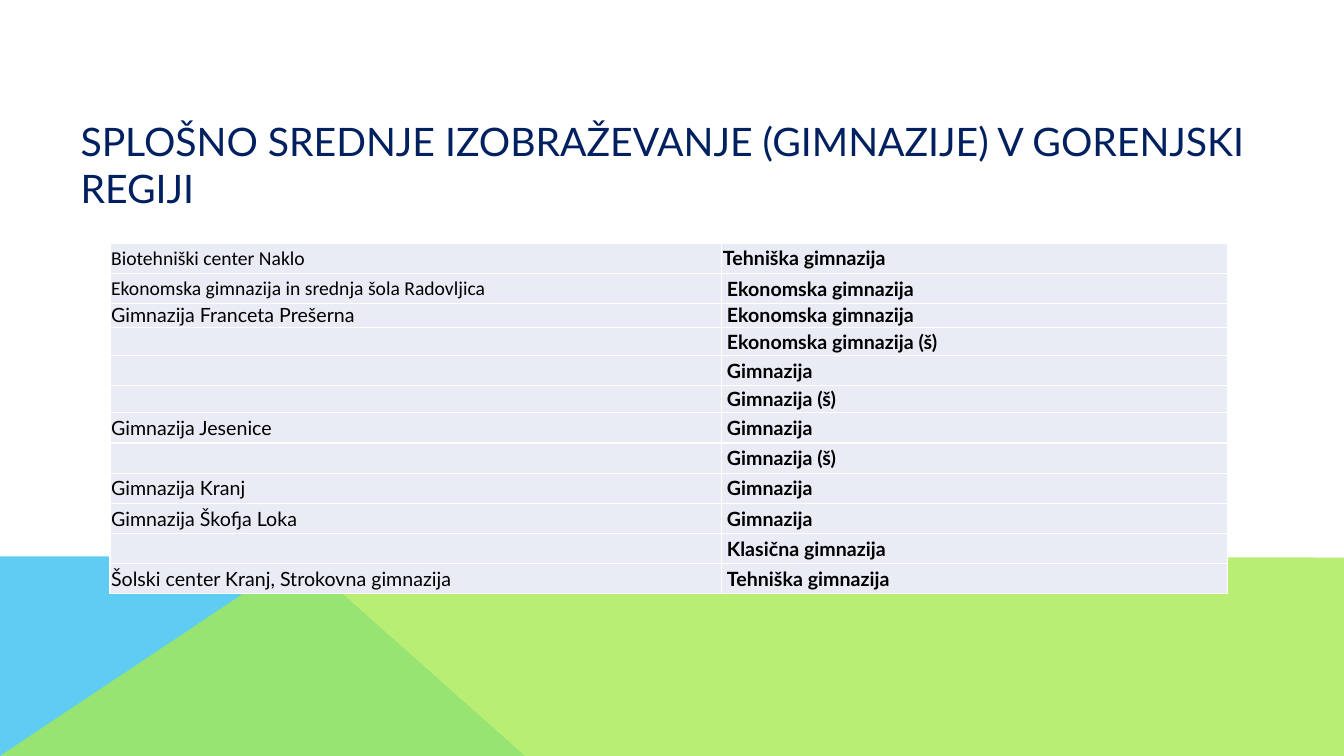
"""Build the slide listing general upper secondary schools in Gorenjska."""
from dataclasses import dataclass

from lxml import etree
from pptx import Presentation
from pptx.dml.color import RGBColor
from pptx.enum.text import MSO_ANCHOR
from pptx.oxml.ns import qn
from pptx.slide import Slide
from pptx.table import _Cell
from pptx.text.text import _Paragraph
from pptx.util import Cm, Pt

MIDDLE = MSO_ANCHOR.MIDDLE


@dataclass(frozen=True)
class Theme:
    """Colours, fonts and type sizes."""
    title: str = "002060"
    text: str = "000000"
    cell: str = "E9EBF5"
    blue: str = "5ECCF3"
    green: str = "A7EA52"
    main_font: str = "Lato"
    school_font: str = "Calibri"
    title_size: int = 28
    table_size: int = 14


THEME = Theme()


@dataclass(frozen=True)
class Panel:
    """A decorative polygon with corners in centimetres."""
    corners: tuple[tuple[float, float], ...]
    colour: str
    opacity: int = 100


@dataclass(frozen=True)
class Programme:
    """A table row: school, programme and row height in centimetres."""
    school: str
    name: str
    height: float = 0.76
    school_font: str = THEME.main_font
    name_margin: float = 0.13


PANELS = (
    Panel(((0, 19.05), (0, 14.02), (7.57, 14.02), (13.23, 19.05)), THEME.blue),
    Panel(((0, 19.05), (7.54, 14.02), (33.87, 14.05), (33.87, 19.05)), THEME.green, 80),
)
TITLE = "SPLOŠNO SREDNJE IZOBRAŽEVANJE (GIMNAZIJE) V GORENJSKI REGIJI"
PROGRAMMES = (
    Programme("Biotehniški center Naklo", "Tehniška gimnazija",
              school_font=THEME.school_font, name_margin=0.03),
    Programme("Ekonomska gimnazija in srednja šola Radovljica", "Ekonomska gimnazija",
              school_font=THEME.school_font),
    Programme("Gimnazija Franceta Prešerna", "Ekonomska gimnazija", 0.51),
    Programme("", "Ekonomska gimnazija (š)", 0.72),
    Programme("", "Gimnazija"),
    Programme("", "Gimnazija (š)", 0.68),
    Programme("Gimnazija Jesenice", "Gimnazija"),
    Programme("", "Gimnazija (š)"),
    Programme("Gimnazija Kranj", "Gimnazija"),
    Programme("Gimnazija Škofja Loka", "Gimnazija"),
    Programme("", "Klasična gimnazija"),
    Programme("Šolski center Kranj, Strokovna gimnazija", "Tehniška gimnazija"),
)
COLUMN_WIDTHS = (15.42, 12.75)
SCHOOL_MARGIN = 0.03


def style_paragraph(paragraph: _Paragraph, font_name: str, size: int,
                    colour: str, bold: bool = False) -> None:
    """Set the font of a whole paragraph."""
    font = paragraph.font
    font.name, font.size, font.bold = font_name, Pt(size), bold
    font.color.rgb = RGBColor.from_string(colour)


def draw_panel(slide: Slide, panel: Panel) -> None:
    """Draw a filled polygon without an outline."""
    start, *others = [(Cm(x), Cm(y)) for x, y in panel.corners]
    builder = slide.shapes.build_freeform(*start)
    builder.add_line_segments(others, close=True)
    shape = builder.convert_to_shape()
    shape.shadow.inherit = False
    shape.line.fill.background()
    shape.fill.solid()
    shape.fill.fore_color.rgb = RGBColor.from_string(panel.colour)
    if panel.opacity < 100:
        colour = shape.fill._xPr.find(qn("a:solidFill"))[0]
        etree.SubElement(colour, qn("a:alpha"), val=str(panel.opacity * 1000))


def draw_title(slide: Slide) -> None:
    """Add the slide heading."""
    shape = slide.shapes.add_textbox(Cm(1.78), Cm(0.74), Cm(32.08), Cm(6.8))
    frame = shape.text_frame
    frame.word_wrap = True
    frame.vertical_anchor = MIDDLE
    frame.text = TITLE
    style_paragraph(frame.paragraphs[0], THEME.main_font, THEME.title_size, THEME.title)


def fill_cell(cell: _Cell, text: str, font_name: str, margin: float, bold: bool) -> None:
    """Fill and style one table cell."""
    cell.fill.solid()
    cell.fill.fore_color.rgb = RGBColor.from_string(THEME.cell)
    cell.vertical_anchor = MIDDLE
    cell.margin_left = cell.margin_right = Cm(margin)
    cell.margin_top = cell.margin_bottom = 0
    cell.text = text
    paragraph = cell.text_frame.paragraphs[0]
    style_paragraph(paragraph, font_name, THEME.table_size, THEME.text, bold)
    if not text:
        etree.SubElement(paragraph._p, qn("a:endParaRPr"), sz=str(THEME.table_size * 100))


def draw_table(slide: Slide) -> None:
    """Add the table of schools and programmes."""
    height = sum(programme.height for programme in PROGRAMMES)
    table = slide.shapes.add_table(len(PROGRAMMES), len(COLUMN_WIDTHS), Cm(2.77), Cm(6.13),
                                   Cm(sum(COLUMN_WIDTHS)), Cm(height)).table
    table.first_row = table.horz_banding = False
    for column, width in zip(table.columns, COLUMN_WIDTHS):
        column.width = Cm(width)
    for row, programme in zip(table.rows, PROGRAMMES):
        row.height = Cm(programme.height)
        school_cell, name_cell = row.cells
        fill_cell(school_cell, programme.school, programme.school_font, SCHOOL_MARGIN, False)
        fill_cell(name_cell, programme.name, THEME.main_font, programme.name_margin, True)


def main() -> None:
    """Assemble and save the presentation."""
    presentation = Presentation()
    presentation.slide_width, presentation.slide_height = Cm(33.87), Cm(19.05)
    slide = presentation.slides.add_slide(presentation.slide_layouts[6])
    for panel in PANELS:
        draw_panel(slide, panel)
    draw_title(slide)
    draw_table(slide)
    presentation.save("out.pptx")


if __name__ == "__main__":
    main()
